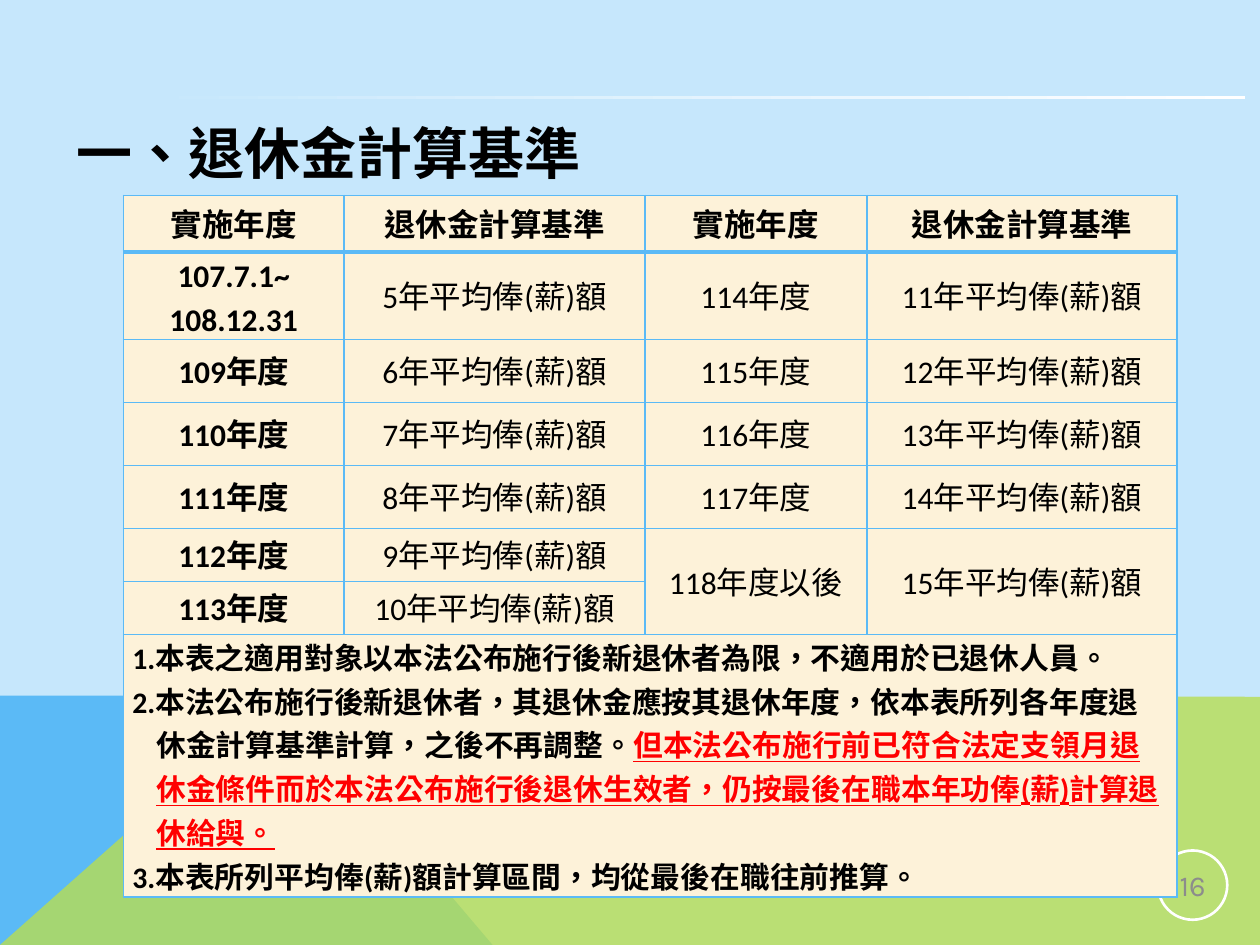
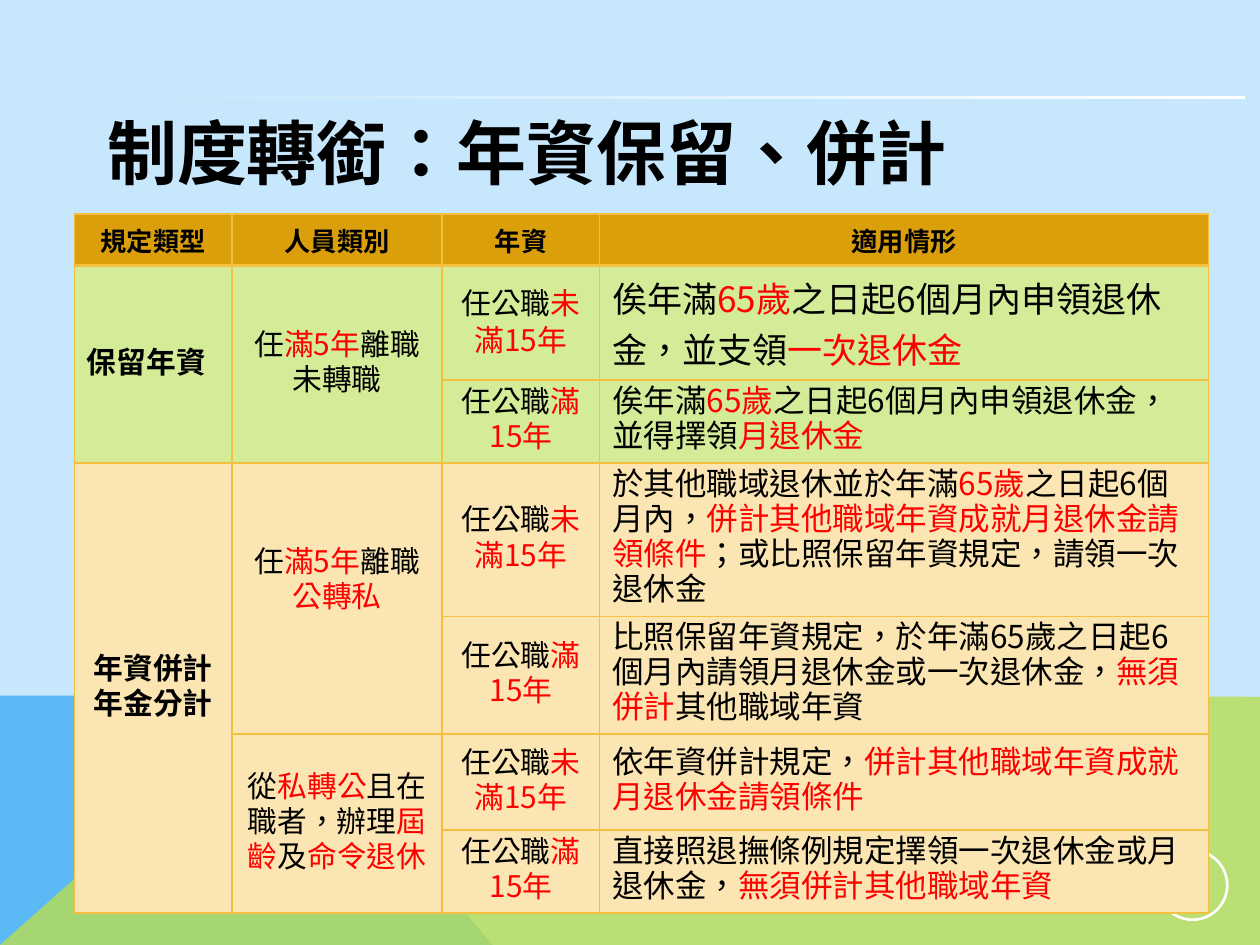
import pptx
import pptx.util
import pptx.dml.color
import pptx.enum.shapes
import pptx.enum.text
import pptx.oxml
import pptx.oxml.ns
import lxml.etree

Inches, Pt = pptx.util.Inches, pptx.util.Pt
RGB = pptx.dml.color.RGBColor
KIND = pptx.enum.shapes.MSO_SHAPE
ALIGN = pptx.enum.text.PP_ALIGN
MID = pptx.enum.text.MSO_ANCHOR.MIDDLE
qn = pptx.oxml.ns.qn

SKY = RGB(0xC6, 0xE7, 0xFC)
BLUE = RGB(0x5B, 0xBA, 0xF6)
GREEN = RGB(0xB8, 0xDD, 0x52)
WHITE = RGB(0xFF, 0xFF, 0xFF)
BLACK = RGB(0, 0, 0)
RED = RGB(0xFF, 0, 0)
GRAY = RGB(0x8C, 0x8C, 0x8C)
CREAM = RGB(0xFD, 0xF2, 0xD9)
AMBER = RGB(0xDC, 0x9F, 0x0C)
GOLD = RGB(0xF5, 0xC0, 0x40)
LIME = RGB(0xD4, 0xEB, 0x97)
SAND = RGB(0xFB, 0xE6, 0xB3)
HAN = "Noto Sans CJK SC"

# Content: text between stars is red, None marks a merged-away cell
HEAD = ["實施年度", "退休金計算基準"]
NOTES = "\n".join([
    "1.本表之適用對象以本法公布施行後新退休者為限，不適用於已退休人員。",
    "2.本法公布施行後新退休者，其退休金應按其退休年度，依本表所列各年度退休金計算基準計算，"
    "之後不再調整。*但本法公布施行前已符合法定支領月退休金條件而於本法公布施行後退休生效者，"
    "仍按最後在職本年功俸(薪)計算退休給與。*",
    "3.本表所列平均俸(薪)額計算區間，均從最後在職往前推算。",
])
YEARS = [
    ("107.7.1~\n108.12.31", "114年度"),
    ("109年度", "115年度"),
    ("110年度", "116年度"),
    ("111年度", "117年度"),
    ("112年度", "118年度以後"),
    ("113年度", None),
]
BASE = [HEAD * 2]
for i, (left, right) in enumerate(YEARS):
    BASE.append([left, f"{5 + i}年平均俸(薪)額",
                 right, right and f"{11 + i}年平均俸(薪)額"])
BASE.append([NOTES, None, None, None])

UNDER, OVER = "任公職*未滿15年*", "任公職*滿15年*"
RULES = [
    ["規定類型", "人員類別", "年資", "適用情形"],
    ["保留年資", "任*滿5年*離職\n未轉職", UNDER,
     "俟年滿*65歲*之日起6個月內申領退休金，並支領*一次退休金*"],
    [None, None, OVER,
     "俟年滿*65歲*之日起6個月內申領退休金，並得擇領*月退休金*"],
    ["年資併計\n年金分計", "任*滿5年*離職\n*公轉私*", UNDER,
     "於其他職域退休並於年滿*65歲*之日起6個月內，*併計其他職域年資成就月退休金請領條件*"
     "；或比照保留年資規定，請領一次退休金"],
    [None, None, OVER,
     "比照保留年資規定，於年滿65歲之日起6個月內請領月退休金或一次退休金，*無須併計*其他職域年資"],
    [None, "從*私轉公*且在職者，辦理*屆齡*及*命令退休*", UNDER,
     "依年資併計規定，*併計其他職域年資成就月退休金請領條件*"],
    [None, None, OVER,
     "直接照退撫條例規定擇領一次退休金或月退休金，*無須併計其他職域年資*"],
]


def write(frame, text, size, font=HAN, color=BLACK, bold=False,
          align=ALIGN.LEFT, lead=None, hang=0, line=False):
    """Fill a text frame; line underlines the red parts."""
    for i, row in enumerate(text.split("\n")):
        para = frame.add_paragraph() if i else frame.paragraphs[0]
        para.alignment = align
        if lead:
            para.line_spacing = Pt(lead)
        if hang:
            props = para._p.get_or_add_pPr()
            props.set("marL", str(Inches(hang)))
            props.set("indent", str(-Inches(hang)))
        for j, part in enumerate(row.split("*")):
            if not part:
                continue
            run = para.add_run()
            run.text = part
            run.font.name, run.font.size, run.font.bold = font, Pt(size), bold
            run.font.color.rgb = RED if j % 2 else color
            if line and j % 2:
                run.font.underline = True
            props = run._r.get_or_add_rPr()
            props.set("lang", "zh-TW")
            east = lxml.etree.Element(qn("a:ea"), typeface=HAN)
            props.find(qn("a:latin")).addnext(east)


def edge(cell, color, top, low):
    """Draw the four borders of a cell; they precede its fill."""
    props = cell._tc.get_or_add_tcPr()
    for i, (side, wide) in enumerate(zip("LRTB", (1, 1, top, low))):
        line = lxml.etree.Element(qn("a:ln" + side), w=str(Pt(wide)))
        fill = lxml.etree.SubElement(line, qn("a:solidFill"))
        lxml.etree.SubElement(fill, qn("a:srgbClr"), val=str(color))
        props.insert(i, line)


def grid(slide, rows, at, wide, high, spans, rim, paint, style, pad):
    """Add a table; paint and style give each cell's fill and text format."""
    table = slide.shapes.add_table(
        len(rows), len(wide), Inches(at[0]), Inches(at[1]),
        Inches(sum(wide)), Inches(sum(high))).table
    table.horz_banding = False
    for col, w in zip(table.columns, wide):
        col.width = Inches(w)
    for row, h in zip(table.rows, high):
        row.height = Inches(h)
    for (r, c), (down, over) in spans.items():
        table.cell(r, c).merge(table.cell(r + down - 1, c + over - 1))
    for r, row in enumerate(rows):
        for c, text in enumerate(row):
            cell = table.cell(r, c)
            cell.fill.solid()
            cell.fill.fore_color.rgb = paint(r)
            edge(cell, rim, 2 if r == 1 else 1, 2 if r == 0 else 1)
            cell.vertical_anchor = MID
            cell.margin_left = cell.margin_right = Inches(pad[0])
            cell.margin_top = cell.margin_bottom = Inches(pad[1])
            if text:
                write(cell.text_frame, text, bold=r == 0 or c == 0, **style(r, c))
    return table


def plain(shape, color=None):
    """Remove the shadow and line, and set a solid fill if given."""
    shape.shadow.inherit = False
    shape.line.fill.background()
    if color is not None:
        shape.fill.solid()
        shape.fill.fore_color.rgb = color
    return shape


def wedge(slide, spots, color):
    build = slide.shapes.build_freeform(
        Inches(spots[0][0]), Inches(spots[0][1]), scale=1.0)
    build.add_line_segments([(Inches(x), Inches(y)) for x, y in spots[1:]])
    return plain(build.convert_to_shape(), color)


def scene(layout, slide):
    """Draw the shared backdrop once and move it to the layout."""
    layout.background.fill.solid()
    layout.background.fill.fore_color.rgb = SKY
    hill = wedge(slide, [(0, 7.5), (0, 5.52), (2.23, 5.52), (3.91, 7.5)], BLUE)
    field = wedge(slide, [(0, 7.5), (2.23, 5.52), (10, 5.53), (10, 7.5)], GREEN)
    tone = field._element.spPr.find(qn("a:solidFill"))[0]
    lxml.etree.SubElement(tone, qn("a:alpha"), val="80000")
    rule = plain(slide.shapes.add_shape(
        KIND.RECTANGLE, Inches(1.11), Inches(0.76), Inches(8.77), Inches(0.03)))
    rule.fill.gradient()
    rule.fill.gradient_angle = 0
    for stop, color in zip(rule.fill.gradient_stops, (SKY, WHITE)):
        stop.color.rgb = color
    for shape in (hill, field, rule):
        layout.shapes.element.append(shape.element)


def start(slide, title, left, wide, size, page=""):
    """Set the title and the page-number ring."""
    head = slide.shapes.title
    head.left, head.top = Inches(left), Inches(0.52)
    head.width, head.height = Inches(wide), Inches(1.37)
    frame = head.text_frame
    frame.auto_size = pptx.enum.text.MSO_AUTO_SIZE.NONE
    frame.word_wrap, frame.vertical_anchor = True, MID
    write(frame, title, size, bold=True)
    ring = plain(slide.shapes.add_shape(
        KIND.OVAL, Inches(9.19), Inches(6.75), Inches(0.55), Inches(0.55)))
    ring.fill.background()
    ring.line.color.rgb, ring.line.width = WHITE, Pt(1.5)
    frame = ring.text_frame
    frame.vertical_anchor = MID
    frame.margin_left = frame.margin_right = Inches(0.01)
    frame.margin_top = frame.margin_bottom = Inches(0.01)
    if page:
        write(frame, page, 16.5, font="Karla", color=GRAY, align=ALIGN.CENTER)


def base_style(r, c):
    if r == len(BASE) - 1:
        return dict(size=17, font="Calibri", lead=25, hang=0.19, line=True)
    return dict(size=18, font="Calibri", lead=25, align=ALIGN.CENTER)


def rule_style(r, c):
    if r == 0:
        return dict(size=15, align=ALIGN.CENTER)
    if c == 3:
        return dict(size=20) if r == 1 else dict(size=18, lead=20)
    return dict(size=17, lead=21 if (r, c) == (1, 2) else 20,
                align=ALIGN.LEFT if (r, c) == (1, 0) else ALIGN.CENTER)


def main():
    deck = pptx.Presentation()
    deck.slide_width, deck.slide_height = Inches(10), Inches(7.5)
    layout = deck.slide_layouts[5]

    # Pension base by year
    slide = deck.slides.add_slide(layout)
    scene(layout, slide)
    start(slide, "一、退休金計算基準", 0.51, 9, 32, "16")
    grid(slide, BASE, (0.98, 1.55), [1.75, 2.39, 1.76, 2.46],
         [0.45, 0.69] + [0.5] * 3 + [0.42] * 2 + [2.08],
         {(5, 2): (2, 1), (5, 3): (2, 1), (7, 0): (1, 4)},
         BLUE, lambda r: CREAM, base_style, (0.07, 0))

    # Keeping and joining years of service
    slide = deck.slides.add_slide(layout)
    start(slide, "制度轉銜：年資保留、併計", 0.75, 8.69, 40)
    table = grid(slide, RULES, (0.59, 1.7), [1.25, 1.67, 1.25, 4.83],
                 [0.41, 0.9, 0.65, 1.22, 0.93, 0.76, 0.66],
                 {(1, 0): (2, 1), (1, 1): (2, 1), (3, 0): (4, 1),
                  (3, 1): (2, 1), (5, 1): (2, 1)},
                 GOLD, lambda r: AMBER if r == 0 else LIME if r < 3 else SAND,
                 rule_style, (0.1, 0.05))
    table.cell(3, 1).margin_bottom = Inches(0.33)

    deck.save("out.pptx")


if __name__ == "__main__":
    main()
